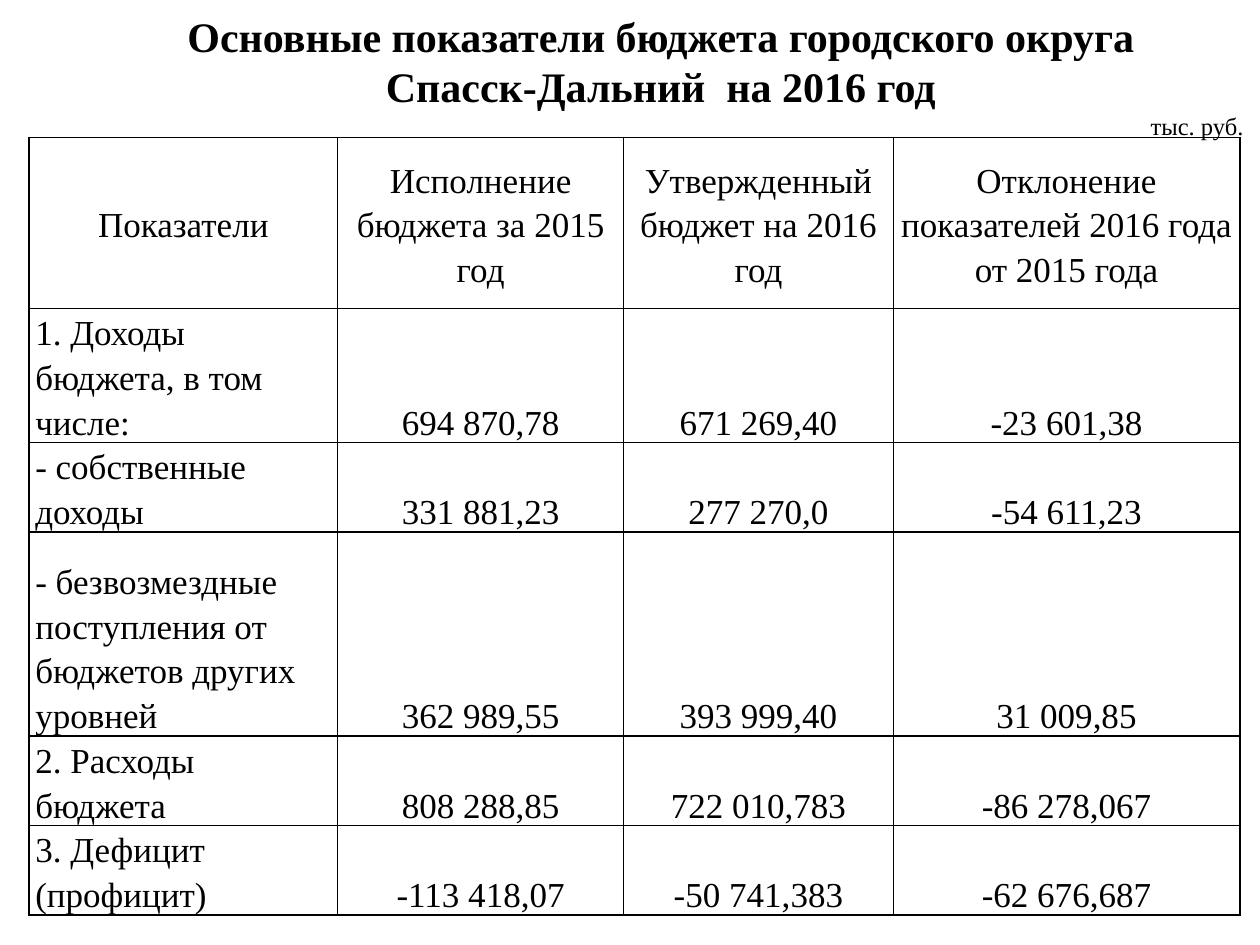
from lxml import etree
from pptx import Presentation, util as u
from pptx.dml import color
from pptx.enum import text
from pptx.oxml import ns

deck = Presentation()
deck.slide_width, deck.slide_height = u.Inches(10), u.Inches(7.5)
column, row = deck.slide_width / 100, deck.slide_height / 100
page = deck.slides.add_slide(deck.slide_layouts[6])
BLACK = "000000"
CENTER, LEFT, RIGHT = text.PP_ALIGN.CENTER, text.PP_ALIGN.LEFT, text.PP_ALIGN.RIGHT


def paint(hex_color):
    return color.RGBColor.from_string(hex_color)


def add_span(para, words, size, align, bold=False):
    para.alignment = align
    span = para.add_run()
    span.text = words
    span.font.name = "Times New Roman"
    span.font.size = u.Pt(size)
    span.font.bold = bold
    span.font.color.rgb = paint(BLACK)


column_shares = [24.5, 22.7, 21.4, 27.5]
row_shares = [18.13, 14.13, 9.47, 21.6, 9.47, 9.47]
budget = [
    ["Показатели", "Исполнение бюджета за 2015 год", "Утвержденный бюджет на 2016 год",
     "Отклонение показателей 2016 года от 2015 года"],
    ["1. Доходы бюджета, в том числе:", "694 870,78", "671 269,40", "-23 601,38"],
    ["- собственные доходы", "331 881,23", "277 270,0", "-54 611,23"],
    ["- безвозмездные поступления от бюджетов других уровней",
     "362 989,55", "393 999,40", "31 009,85"],
    ["2. Расходы бюджета", "808 288,85", "722 010,783", "-86 278,067"],
    ["3. Дефицит (профицит)", "-113 418,07", "-50 741,383", "-62 676,687"],
]

table = page.shapes.add_table(
    len(row_shares), len(column_shares),
    int(2.3 * column), int(14.53 * row),
    int(sum(column_shares) * column), int(sum(row_shares) * row),
).table
table.first_row = table.horz_banding = False
for index, share in enumerate(column_shares):
    table.columns[index].width = int(share * column)
for index, share in enumerate(row_shares):
    table.rows[index].height = int(share * row)

for line, labels in enumerate(budget):
    for place, label in enumerate(labels):
        cell = table.cell(line, place)
        cell.margin_left = cell.margin_right = u.Inches(0.05)
        cell.margin_top = cell.margin_bottom = 0
        cell.vertical_anchor = text.MSO_ANCHOR.BOTTOM if line else text.MSO_ANCHOR.MIDDLE
        para = cell.text_frame.paragraphs[0]
        para.line_spacing = 1.15
        para.space_after = u.Pt(10)
        add_span(para, label, 20, LEFT if line and not place else CENTER)
        properties = cell._tc.get_or_add_tcPr()
        for side in ("a:lnL", "a:lnR", "a:lnT", "a:lnB"):
            border = etree.SubElement(properties, ns.qn(side), w=str(u.Pt(1)))
            fill = etree.SubElement(border, ns.qn("a:solidFill"))
            etree.SubElement(fill, ns.qn("a:srgbClr"), val=BLACK)
        cell.fill.background()

box = page.shapes.add_textbox(0, 0, deck.slide_width, int(19.33 * row))
frame = box.text_frame
frame.word_wrap = True
frame.vertical_anchor = text.MSO_ANCHOR.TOP
frame.margin_left = frame.margin_right = u.Inches(0.13)
frame.margin_top = u.Inches(0.08)
headings = [
    ("Основные показатели бюджета городского округа", 24, CENTER, True),
    ("Спасск-Дальний  на 2016 год", 24, CENTER, True),
    ("тыс. руб.", 14, RIGHT, False),
]
for index, (words, size, align, bold) in enumerate(headings):
    para = frame.add_paragraph() if index else frame.paragraphs[0]
    if align == CENTER:
        para._p.get_or_add_pPr().set("indent", str(u.Inches(0.49)))
    add_span(para, words, size, align, bold)

deck.save("out.pptx")
